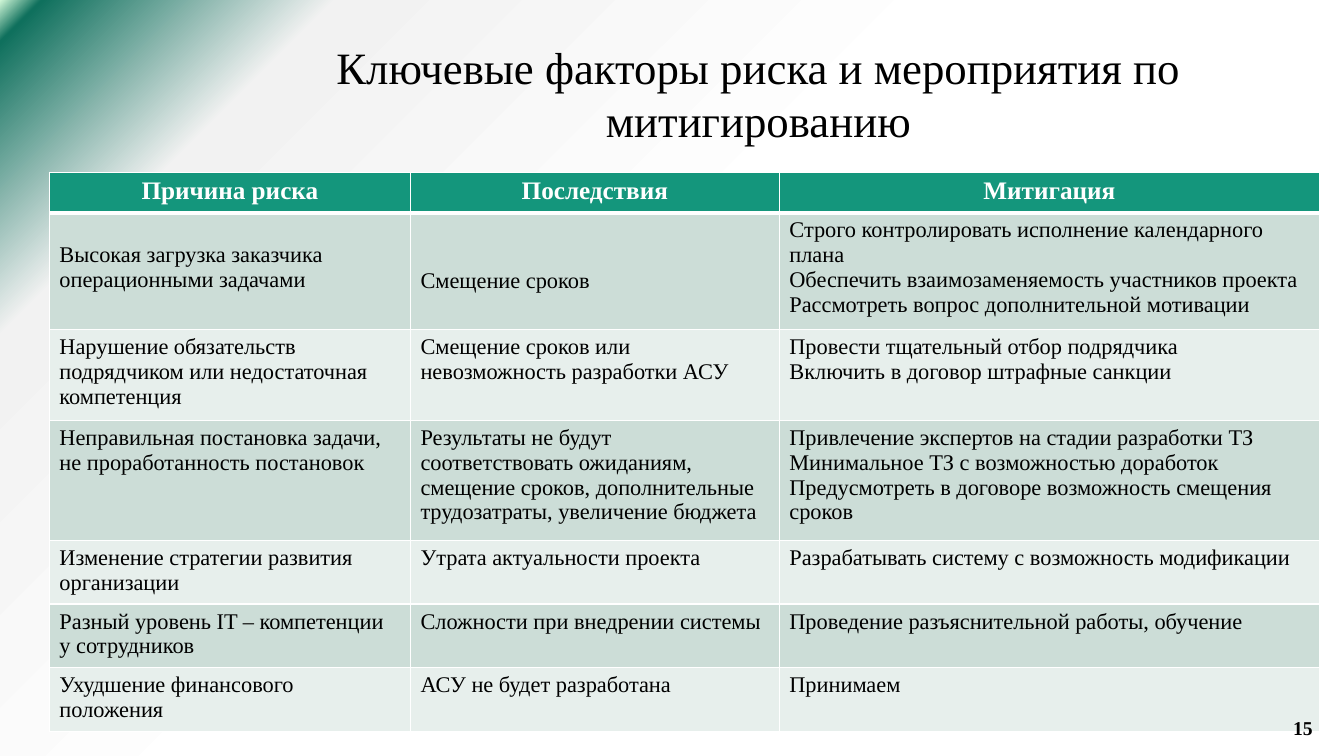
from lxml.etree import SubElement
from pptx import Presentation
from pptx.dml.color import RGBColor
from pptx.enum.shapes import MSO_CONNECTOR
from pptx.enum.text import MSO_AUTO_SIZE, PP_ALIGN
from pptx.oxml.ns import qn
from pptx.util import Pt

FONT = "Times New Roman"
COLORS = {"white": "FFFFFF", "black": "000000", "header": "14967C",
          "dark_band": "CCDDD7", "light_band": "E7EFEC"}
BACKGROUND_STOPS = [(53, "FFFFFF"), (84, "F2F2F2"), (98, "0F705D"), (100, "D3FADA")]
RAYS = [(233.3, 72, 0.75), (251.3, 234.7, 0.75), (258.5, 149.4, 0.75),
        (246.2, 137.5, 2.25), (290.2, 100, 2.25)]
COLUMN_WIDTHS = [257.9, 263.5, 385.8]
ROW_HEIGHTS = [28.8, 83.5, 64.8, 85.9, 45.4, 45.4, 45.4]
FIRST_RISK_TOPS = [21.6, 39.6, 3.6]
HEADINGS = ["Причина риска", "Последствия", "Митигация"]
RISKS = [
    ["Высокая загрузка заказчика операционными задачами",
     "Смещение сроков",
     "Строго контролировать исполнение календарного плана\n"
     "Обеспечить взаимозаменяемость участников проекта\n"
     "Рассмотреть вопрос дополнительной мотивации"],
    ["Нарушение обязательств подрядчиком или недостаточная компетенция",
     "Смещение сроков или невозможность разработки АСУ",
     "Провести тщательный отбор подрядчика\nВключить в договор штрафные санкции"],
    ["Неправильная постановка задачи, не проработанность постановок",
     "Результаты не будут соответствовать ожиданиям, смещение сроков, "
     "дополнительные трудозатраты, увеличение бюджета",
     "Привлечение экспертов на стадии разработки ТЗ\n"
     "Минимальное ТЗ с возможностью доработок\n"
     "Предусмотреть в договоре возможность смещения сроков"],
    ["Изменение стратегии развития организации",
     "Утрата актуальности проекта",
     "Разрабатывать систему с возможность модификации"],
    ["Разный уровень IT – компетенции у сотрудников",
     "Сложности при внедрении системы",
     "Проведение разъяснительной работы, обучение"],
    ["Ухудшение финансового положения",
     "АСУ не будет разработана",
     "Принимаем"],
]


def color(name):
    """Return the named colour."""
    return RGBColor.from_string(COLORS[name])


def paint_background(page):
    """Fill the page with a radial gradient centred on its lower right corner."""
    page.background.fill.gradient()
    gradient = page.element.find(".//" + qn("a:gradFill"))
    for child in list(gradient):
        gradient.remove(child)
    stops = SubElement(gradient, qn("a:gsLst"))
    for position, value in BACKGROUND_STOPS:
        stop = SubElement(stops, qn("a:gs"), pos=str(position * 1000))
        SubElement(stop, qn("a:srgbClr"), val=value)
    circle = SubElement(gradient, qn("a:path"), {"path": "circle"})
    SubElement(circle, qn("a:fillToRect"), l="100000", t="100000")


def add_ray(page, top, reach, width):
    """Draw a white diagonal running down and left from the right edge."""
    ray = page.shapes.add_connector(
        MSO_CONNECTOR.STRAIGHT, Pt(960), Pt(top), Pt(960 - reach), Pt(top + reach))
    ray.line.color.rgb = color("white")
    ray.line.width = Pt(width)
    SubElement(ray.element.spPr, qn("a:effectLst"))


def write(frame, text, size, ink="black", bold=False, align=PP_ALIGN.LEFT):
    """Put text into a frame and style its paragraphs."""
    frame.text = text
    for para in frame.paragraphs:
        para.alignment = align
        para.font.name = FONT
        para.font.size = Pt(size)
        para.font.bold = bold
        para.font.color.rgb = color(ink)


def add_text(page, bounds, text, size, **style):
    """Add a wrapping text box."""
    box = page.shapes.add_textbox(*map(Pt, bounds))
    box.text_frame.word_wrap = True
    box.text_frame.auto_size = MSO_AUTO_SIZE.SHAPE_TO_FIT_TEXT
    write(box.text_frame, text, size, **style)


def style_cell(cell, fill, bottom_width):
    """Give a cell white borders and a plain fill."""
    properties = cell._tc.get_or_add_tcPr()
    for side, width in [("L", 1), ("R", 1), ("T", 1), ("B", bottom_width)]:
        border = SubElement(properties, qn(f"a:ln{side}"), w=str(Pt(width)))
        ink = SubElement(border, qn("a:solidFill"))
        SubElement(ink, qn("a:srgbClr"), val=COLORS["white"])
    cell.fill.solid()
    cell.fill.fore_color.rgb = color(fill)


def add_risk_table(page):
    """Add the table of risks, consequences and mitigation."""
    table = page.shapes.add_table(
        len(ROW_HEIGHTS), len(COLUMN_WIDTHS), Pt(35.3), Pt(123.1),
        Pt(sum(COLUMN_WIDTHS)), Pt(sum(ROW_HEIGHTS))).table
    for column, width in zip(table.columns, COLUMN_WIDTHS):
        column.width = Pt(width)
    for row, height in zip(table.rows, ROW_HEIGHTS):
        row.height = Pt(height)
    for cell, heading in zip(table.rows[0].cells, HEADINGS):
        style_cell(cell, "header", 3)
        write(cell.text_frame, heading, 18, "white", True, PP_ALIGN.CENTER)
    for number, risk in enumerate(RISKS, start=1):
        band = "dark_band" if number % 2 else "light_band"
        for cell, text in zip(table.rows[number].cells, risk):
            style_cell(cell, band, 1)
            write(cell.text_frame, text, 16)
    for cell, top in zip(table.rows[1].cells, FIRST_RISK_TOPS):
        cell.margin_top = Pt(top)


def main():
    """Build and save the slide."""
    deck = Presentation()
    deck.slide_width, deck.slide_height = Pt(960), Pt(540)
    page = deck.slides.add_slide(deck.slide_layouts[6])
    paint_background(page)
    for ray in RAYS:
        add_ray(page, *ray)
    add_risk_table(page)
    add_text(page, (223.2, 24.5, 637.2, 85),
             "Ключевые факторы риска и мероприятия по митигированию", 32,
             align=PP_ALIGN.CENTER)
    add_text(page, (916.6, 507.6, 31, 24.5), "15", 14, bold=True)
    deck.save("out.pptx")


if __name__ == "__main__":
    main()
